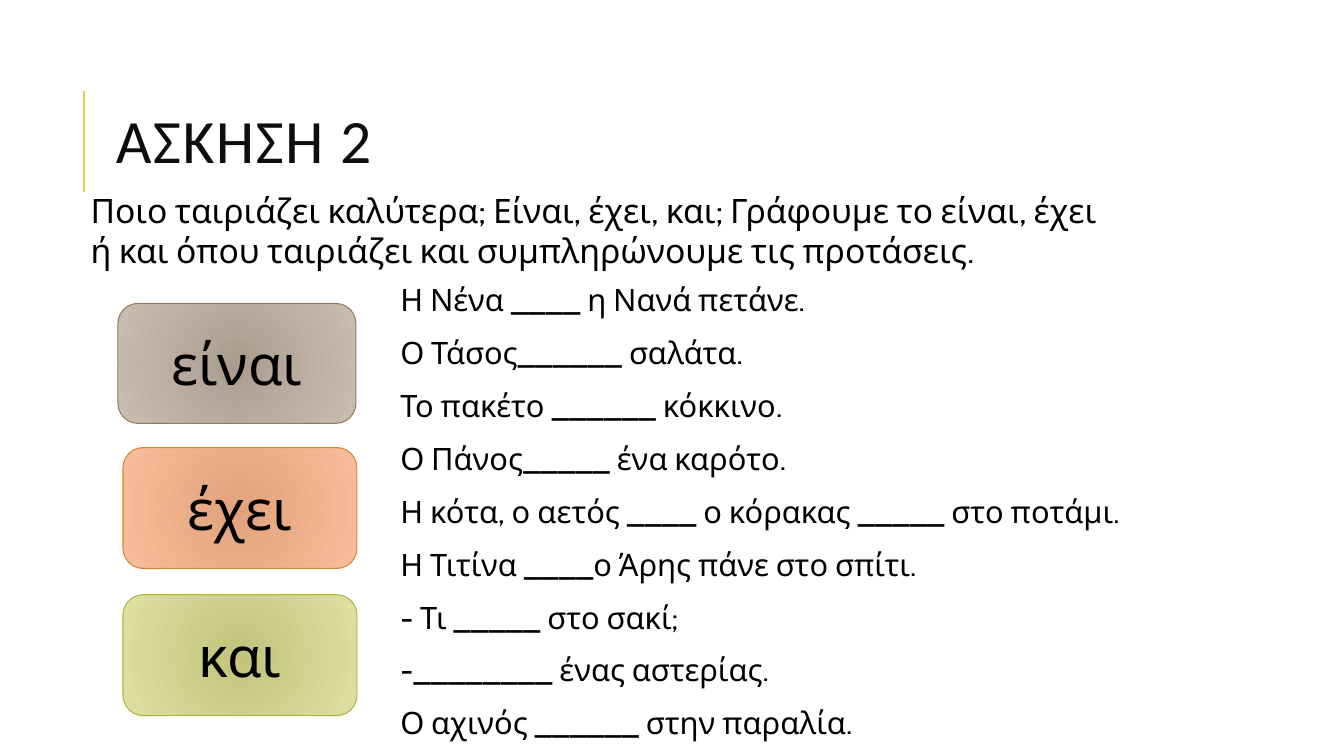
"""Build a Greek fill-in-the-blank exercise slide with three word cards."""
from lxml import etree
from pptx import Presentation
from pptx import util as u
from pptx.dml.color import RGBColor
from pptx.enum import shapes, text
from pptx.oxml import ns

COLORS = {"ink": "000000", "title": "0D0D0D", "accent": "E3CC5A"}


def place(item, left, top, width, height):
    item.left, item.top = u.Inches(left), u.Inches(top)
    item.width, item.height = u.Inches(width), u.Inches(height)


def add_run(paragraph, words, size, font="Cabin", color="ink"):
    run = paragraph.add_run()
    run.text = words
    run.font.size = u.Pt(size)
    run.font.name = font
    run.font.color.rgb = RGBColor.from_string(COLORS[color])
    return run


prs = Presentation()
prs.slide_width, prs.slide_height = u.Inches(13.33), u.Inches(7.5)
slide = prs.slides.add_slide(prs.slide_layouts[1])

title_rule = slide.shapes.add_connector(
    shapes.MSO_CONNECTOR.STRAIGHT,
    u.Inches(0.83), u.Inches(1.9), u.Inches(0.83), u.Inches(0.9))
title_rule.line.color.rgb = RGBColor.from_string(COLORS["accent"])
title_rule.line.width = u.Pt(1.5)
etree.SubElement(title_rule._element.spPr, ns.qn("a:effectLst"))

heading = slide.shapes.title
place(heading, 1.05, 1.1, 11.5, 0.69)
heading.text_frame.auto_size = text.MSO_AUTO_SIZE.NONE
heading.text_frame.vertical_anchor = text.MSO_ANCHOR.MIDDLE
heading_line = heading.text_frame.paragraphs[0]
heading_line.alignment = text.PP_ALIGN.LEFT
heading_line.line_spacing = 0.8
heading_run = add_run(heading_line, "ΑΣΚΗΣΗ 2", 44, "Calibri", "title")
heading_run.font._element.set("spc", "100")

sentences = [
    "Η Νένα ____ η Νανά πετάνε.",
    "Ο Τάσος______ σαλάτα.",
    "Το πακέτο ______ κόκκινο.",
    "Ο Πάνος_____ ένα καρότο.",
    "Η κότα, ο αετός ____ ο κόρακας _____ στο ποτάμι.",
    "Η Τιτίνα ____ο Άρης πάνε στο σπίτι.",
    "- Τι _____ στο σακί;",
    "-________ ένας αστερίας.",
    "Ο αχινός ______ στην παραλία.",
]
exercise = slide.placeholders[1]
place(exercise, 3.82, 2.78, 9.17, 4.72)
blanks = exercise.text_frame
blanks.auto_size = text.MSO_AUTO_SIZE.NONE
blanks.margin_left = blanks.margin_right = u.Inches(0.05)
blanks.margin_top = blanks.margin_bottom = u.Inches(0.05)
for number, sentence in enumerate(sentences):
    row = blanks.add_paragraph() if number else blanks.paragraphs[0]
    row.line_spacing = 0.9
    row.space_before, row.space_after = u.Pt(12), u.Pt(2)
    indents = row._p.get_or_add_pPr()
    indents.set("marL", str(u.Inches(0.1)))
    indents.set("indent", str(-u.Inches(0.1)))
    etree.SubElement(indents, ns.qn("a:buChar"), char=" ")
    add_run(row, sentence, 22)

word_cards = [
    ("έχει", (1.22, 4.44, 2.32, 1.2), ("E2A37B", "F9BD9C"), "DB8631"),
    ("και", (1.22, 5.9, 2.32, 1.2), ("C3C37D", "DFE0A2"), "B3B435"),
    ("είναι", (1.17, 3.01, 2.36, 1.19), ("AB9D8E", "CABEB1"), "927C61"),
]
for word, box, shades, border in word_cards:
    card = slide.shapes.add_shape(
        shapes.MSO_SHAPE.ROUNDED_RECTANGLE, *map(u.Inches, box))
    card.shadow.inherit = False
    card.line.color.rgb = RGBColor.from_string(border)
    card.line.width = u.Pt(0.75)
    card.fill.gradient()
    for stop, shade, position in zip(card.fill.gradient_stops, shades, (0, 1)):
        stop.color.rgb = RGBColor.from_string(shade)
        stop.position = position
    gradient = card._element.spPr.find(ns.qn("a:gradFill"))
    gradient.remove(gradient.find(ns.qn("a:lin")))
    glow = etree.SubElement(gradient, ns.qn("a:path"), path="circle")
    etree.SubElement(glow, ns.qn("a:fillToRect"),
                     {side: "100000" for side in "ltrb"})
    card.text_frame.vertical_anchor = text.MSO_ANCHOR.MIDDLE
    card_line = card.text_frame.paragraphs[0]
    card_line.alignment = text.PP_ALIGN.CENTER
    add_run(card_line, word, 40)

instructions = slide.shapes.add_textbox(
    *map(u.Inches, (0.8, 1.83, 10.35, 0.91))).text_frame
instructions.word_wrap = True
instructions.auto_size = text.MSO_AUTO_SIZE.SHAPE_TO_FIT_TEXT
add_run(instructions.paragraphs[0],
        "Ποιο ταιριάζει καλύτερα; Είναι, έχει, και; Γράφουμε το είναι, έχει "
        "ή και όπου ταιριάζει και συμπληρώνουμε τις προτάσεις.", 24)

prs.save("out.pptx")
